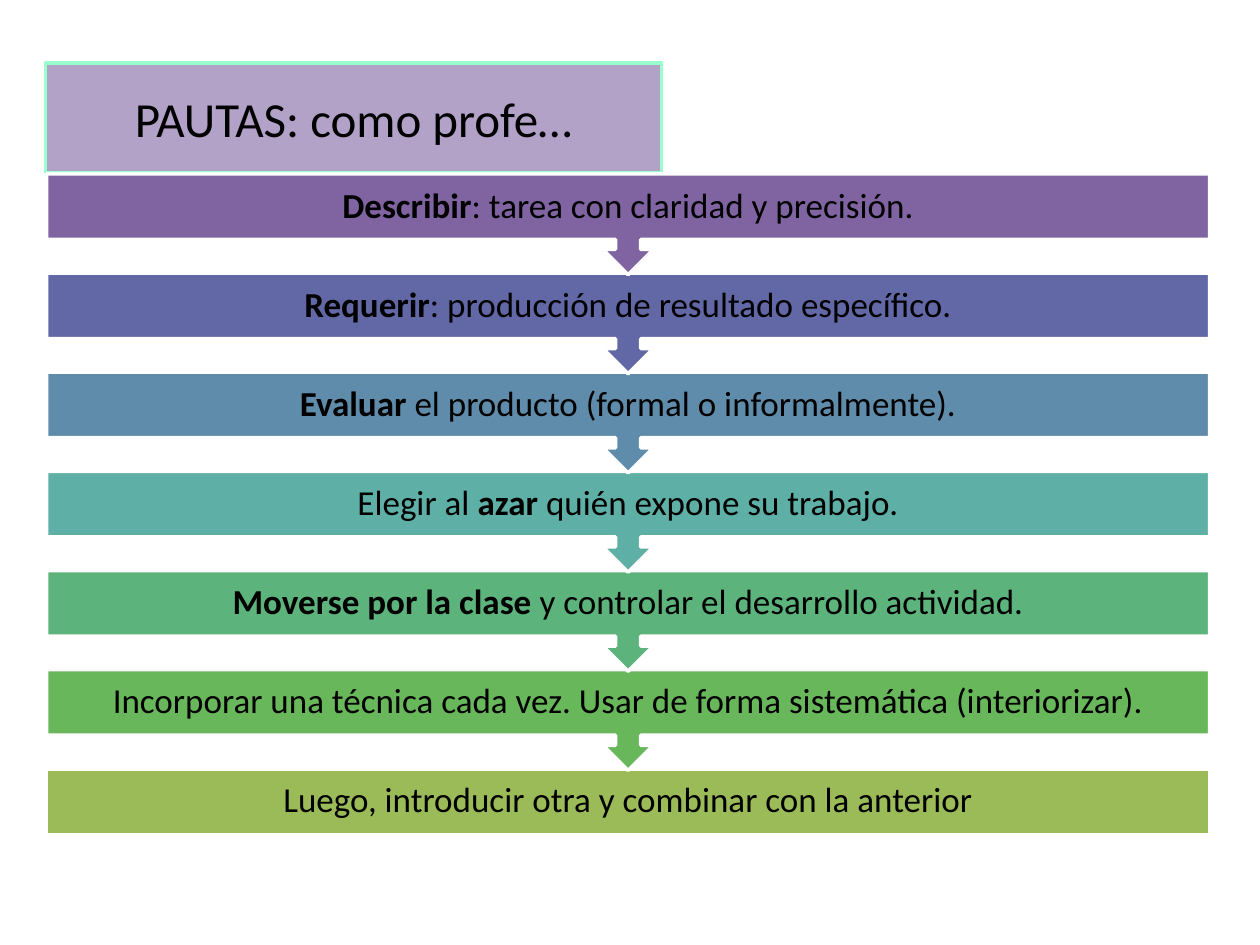
from pptx import Presentation, util as u
from pptx.dml.color import RGBColor
from pptx.enum import shapes, text
from pptx.oxml import parse_xml
from pptx.oxml.ns import nsdecls

BLACK = RGBColor(0, 0, 0)
WHITE = RGBColor(255, 255, 255)
LILAC = RGBColor(0xB3, 0xA2, 0xC7)
MINT = RGBColor(0x99, 0xFF, 0xCC)

TITLE = "PAUTAS: como profe…"
STEPS = [
    (RGBColor(0x80, 0x64, 0xA2), [("Describir", True), (": tarea con claridad y precisión.", False)]),
    (RGBColor(0x62, 0x67, 0xA6), [("Requerir", True), (": producción de resultado específico.", False)]),
    (RGBColor(0x60, 0x8C, 0xAB), [("Evaluar", True), (" el producto (formal o informalmente).", False)]),
    (RGBColor(0x5E, 0xAF, 0xA6), [("Elegir al ", False), ("azar ", True), ("quién expone su trabajo.", False)]),
    (RGBColor(0x5C, 0xB3, 0x7C), [("Moverse por la clase ", True), ("y controlar el desarrollo actividad.", False)]),
    (RGBColor(0x69, 0xB7, 0x5B), [
        ("Incorporar una técnica cada vez. Usar de forma sistemática (interiorizar).", False)]),
    (RGBColor(0x9B, 0xBB, 0x59), [("Luego, introducir otra y combinar con la anterior", False)]),
]

LEFT, TOP, WIDTH = 0.37, 1.38, 9.23
PITCH, BAR, CALL = 0.787, 0.52, 0.8
INSET = u.Inches(0.16)
FRAME = {
    "word_wrap": True,
    "auto_size": text.MSO_AUTO_SIZE.NONE,
    "vertical_anchor": text.MSO_ANCHOR.MIDDLE,
}
PADS = {f"margin_{side}": INSET for side in ("left", "top", "right", "bottom")}


def apply(item, values):
    for key, value in values.items():
        setattr(item, key, value)


def paint(shape, fill, line):
    shape.fill.solid()
    shape.fill.fore_color.rgb = fill
    shape.line.color.rgb = line
    shape.line.width = u.Pt(2)


def write(frame, runs, size, **extra):
    apply(frame, {**FRAME, **extra})
    para = frame.paragraphs[0]
    para.alignment = text.PP_ALIGN.CENTER
    for words, bold in runs:
        run = para.add_run()
        run.text = words
        apply(run.font, {"name": "Calibri", "size": u.Pt(size), "bold": bold})
        run.font.color.rgb = BLACK
    return para


def add_title(slide):
    title = slide.shapes.title
    apply(title, {"left": u.Inches(0.36), "top": u.Inches(0.5),
                  "width": u.Inches(4.89), "height": u.Inches(0.87)})
    title.element.spPr.append(parse_xml(
        f'<a:prstGeom {nsdecls("a")} prst="roundRect"><a:avLst/></a:prstGeom>'))
    paint(title, LILAC, MINT)
    write(title.text_frame, [(TITLE, False)], 28)


def add_step(slide, row, fill, runs):
    last = row == len(STEPS) - 1
    kind = shapes.MSO_SHAPE.RECTANGLE if last else shapes.MSO_SHAPE.UP_ARROW_CALLOUT
    x, y, w = (u.Inches(n) for n in (LEFT, TOP + row * PITCH, WIDTH))
    bar = slide.shapes.add_shape(kind, x, y, w, u.Inches(BAR if last else CALL))
    bar.rotation = 0 if last else 180
    bar.shadow.inherit = False
    paint(bar, fill, WHITE)
    label = slide.shapes.add_textbox(x, y, w, u.Inches(BAR))
    write(label.text_frame, runs, 20, **PADS).line_spacing = 0.9


def main():
    deck = Presentation()
    deck.slide_width, deck.slide_height = u.Inches(10), u.Inches(7.5)
    slide = deck.slides.add_slide(deck.slide_layouts[5])
    add_title(slide)
    for row, (fill, runs) in reversed(list(enumerate(STEPS))):
        add_step(slide, row, fill, runs)
    deck.save("out.pptx")


if __name__ == "__main__":
    main()
